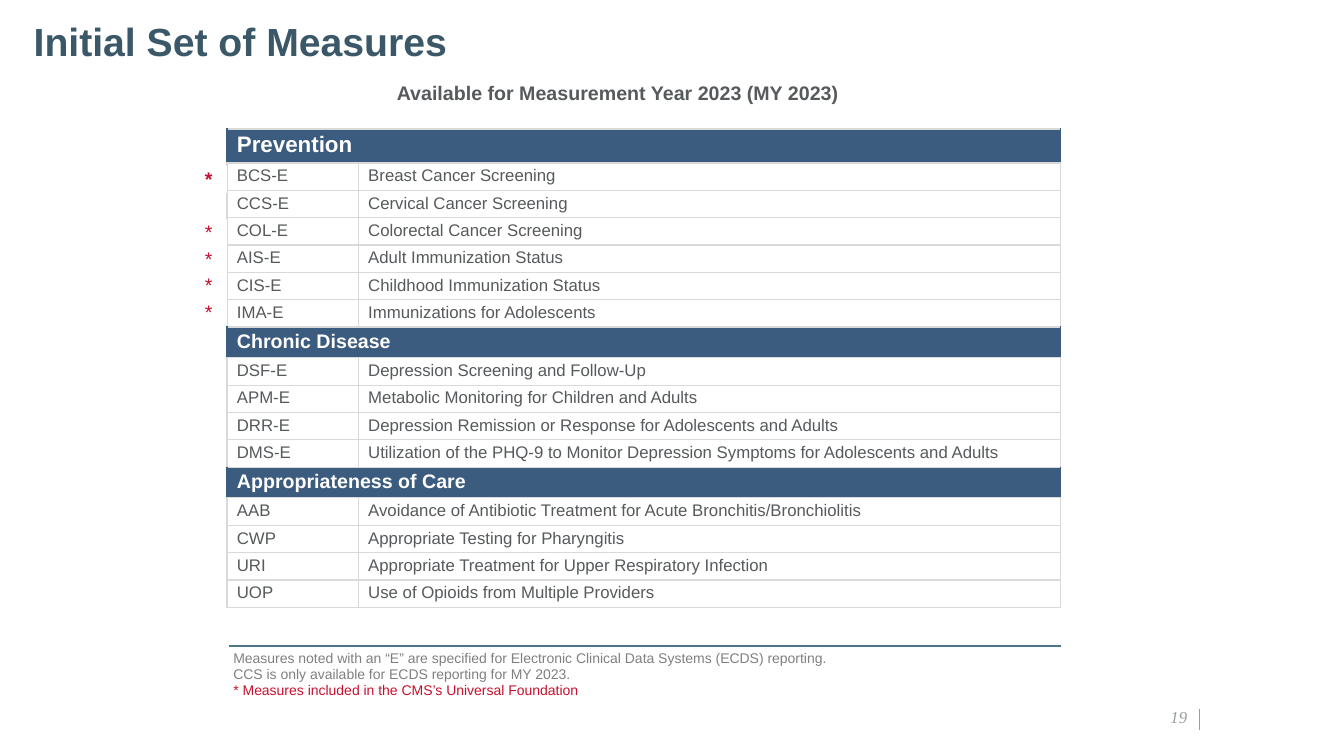
from lxml import etree
from pptx import Presentation
from pptx.dml.color import RGBColor
from pptx.enum import shapes, text
from pptx.oxml import ns
from pptx.util import Cm, Pt

COLORS = {
    "title": "3B5868", "body": "565A5C", "band": "3B5B7F", "white": "FFFFFF",
    "grid": "D9D9D9", "rule": "4F758B", "note": "808080", "accent": "C8102E",
    "page": "989D9F",
}
NO_STYLE = "{2D5ABB26-0587-4C30-8999-92F81FD0307C}"
MIDDLE = text.MSO_ANCHOR.MIDDLE
CENTER = text.PP_ALIGN.CENTER

SECTIONS = [
    ("Prevention", 16, 0.84, [
        ("BCS-E", "Breast Cancer Screening"),
        ("CCS-E", "Cervical Cancer Screening"),
        ("COL-E", "Colorectal Cancer Screening"),
        ("AIS-E", "Adult Immunization Status"),
        ("CIS-E", "Childhood Immunization Status"),
        ("IMA-E", "Immunizations for Adolescents"),
    ]),
    ("Chronic Disease", 14, 0.75, [
        ("DSF-E", "Depression Screening and Follow-Up"),
        ("APM-E", "Metabolic Monitoring for Children and Adults"),
        ("DRR-E", "Depression Remission or Response for Adolescents and Adults"),
        ("DMS-E", "Utilization of the PHQ-9 to Monitor Depression Symptoms "
                  "for Adolescents and Adults"),
    ]),
    ("Appropriateness of Care", 14, 0.75, [
        ("AAB", "Avoidance of Antibiotic Treatment for Acute Bronchitis/Bronchiolitis"),
        ("CWP", "Appropriate Testing for Pharyngitis"),
        ("URI", "Appropriate Treatment for Upper Respiratory Infection"),
        ("UOP", "Use of Opioids from Multiple Providers"),
    ]),
]
MEASURE_HEIGHT = 0.68
NOTES = [
    ("Measures noted with an “E” are specified for Electronic Clinical Data "
     "Systems (ECDS) reporting.", "note"),
    ("CCS is only available for ECDS reporting for MY 2023.", "note"),
    ("* Measures included in the CMS’s Universal Foundation", "accent"),
]
STARRED = {"BCS-E", "COL-E", "AIS-E", "CIS-E", "IMA-E"}


def rgb(name):
    return RGBColor.from_string(COLORS[name])


def add_run(p, words, color, size, **formats):
    r = p.add_run()
    r.text = words
    r.font.color.rgb = rgb(color)
    for name, value in {"name": "Arial", "size": Pt(size), **formats}.items():
        setattr(r.font, name, value)


def set_margins(target, x, y):
    """Set the side and the top and bottom insets, in centimetres."""
    for side, value in {"left": x, "right": x, "top": y, "bottom": y}.items():
        setattr(target, f"margin_{side}", Cm(value))


def add_label(s, box, words, color, size, anchor=MIDDLE, align=None, **formats):
    tf = s.shapes.add_textbox(*map(Cm, box)).text_frame
    tf.word_wrap = True
    tf.vertical_anchor = anchor
    set_margins(tf, 0, 0)
    p = tf.paragraphs[0]
    p.alignment = align
    add_run(p, words, color, size, **formats)


def add_plain_table(s, left, top, widths, heights):
    """Add a table that has no banding and no style of its own."""
    frame = s.shapes.add_table(len(heights), len(widths), Cm(left), Cm(top),
                               Cm(sum(widths)), Cm(sum(heights)))
    table = frame.table
    table.first_row = table.horz_banding = False
    table._tbl.tblPr.find(ns.qn("a:tableStyleId")).text = NO_STYLE
    for column, width in zip(table.columns, widths):
        column.width = Cm(width)
    for row, height in zip(table.rows, heights):
        row.height = Cm(height)
    return table


def set_borders(cell, left, right, top, bottom):
    """Draw the four sides, each given as (colour name, points)."""
    tcPr = cell._tc.get_or_add_tcPr()
    for i, (side, (color, width)) in enumerate(zip("LRTB", (left, right, top, bottom))):
        ln = etree.Element(ns.qn(f"a:ln{side}"), w=str(Pt(width)))
        fill = etree.SubElement(ln, ns.qn("a:solidFill"))
        etree.SubElement(fill, ns.qn("a:srgbClr"), val=COLORS[color])
        tcPr.insert(i, ln)


def fill_cell(cell, color):
    cell.fill.solid()
    cell.fill.fore_color.rgb = rgb(color)


def add_measures(s):
    rows = []
    for heading, size, height, measures in SECTIONS:
        rows.append(((heading,), height, size))
        rows += [(measure, MEASURE_HEIGHT, 12) for measure in measures]
    table = add_plain_table(s, 5.72, 3.25, [3.31, 17.7], [height for _, height, _ in rows])
    for i, (words, _, size) in enumerate(rows):
        heading = len(words) == 1
        for cell in table.rows[i].cells:
            set_margins(cell, 0.25, 0.09)
            fill_cell(cell, "band" if heading else "white")
            side = ("band" if heading else "grid", 1)
            set_borders(cell, side, side, ("grid", 1), ("grid", 1))
        if heading:
            table.cell(i, 0).merge(table.cell(i, 1))
        for j, word in enumerate(words):
            add_run(table.cell(i, j).text_frame.paragraphs[0], word,
                    "white" if heading else "body", size, bold=heading)


def add_stars(s):
    """Mark the starred prevention measures to the left of their rows."""
    measures = SECTIONS[0][3]
    table = add_plain_table(s, 4.95, 4.19, [0.76], [0.67] * len(measures))
    for i, (code, _) in enumerate(measures):
        cell = table.cell(i, 0)
        set_margins(cell, 0, 0)
        cell.vertical_anchor = MIDDLE
        p = cell.text_frame.paragraphs[0]
        p.alignment = CENTER
        if code in STARRED:
            fill_cell(cell, "white")
            add_run(p, "* ", "accent", 14, bold=i == 0)
        else:
            cell.fill.background()
            p._p.get_or_add_endParaRPr().set("sz", "1400")


def add_notes(s):
    cell = add_plain_table(s, 5.75, 16.28, [21], [1.04]).cell(0, 0)
    set_margins(cell, 0.13, 0.13)
    cell.fill.background()
    set_borders(cell, ("white", 1), ("white", 1), ("rule", 1), ("white", 3))
    tf = cell.text_frame
    for i, (words, color) in enumerate(NOTES):
        p = tf.add_paragraph() if i else tf.paragraphs[0]
        add_run(p, words, color, 10)


def add_page_mark(s):
    line = s.shapes.add_connector(shapes.MSO_CONNECTOR.STRAIGHT,
                                  Cm(30.23), Cm(17.86), Cm(30.23), Cm(18.39))
    line.line.color.rgb = rgb("page")
    line.line.width = Pt(1)
    etree.SubElement(line._element.spPr, ns.qn("a:effectLst"))
    add_label(s, (27.91, 17.86, 2.01, 0.46), "19", "page", 12, text.MSO_ANCHOR.BOTTOM,
              text.PP_ALIGN.RIGHT, name="Times New Roman", italic=True)


def main():
    prs = Presentation()
    prs.slide_width, prs.slide_height = Cm(33.87), Cm(19.05)
    s = prs.slides.add_slide(prs.slide_layouts[6])
    add_page_mark(s)
    add_label(s, (0.85, 0.5, 32.18, 1.04), "Initial Set of Measures", "title", 28, bold=True)
    add_measures(s)
    add_label(s, (6.4, 1.91, 18.34, 0.86), "Available for Measurement Year 2023 (MY 2023)",
              "body", 14, align=CENTER, bold=True)
    add_notes(s)
    add_stars(s)
    prs.save("out.pptx")


if __name__ == "__main__":
    main()
